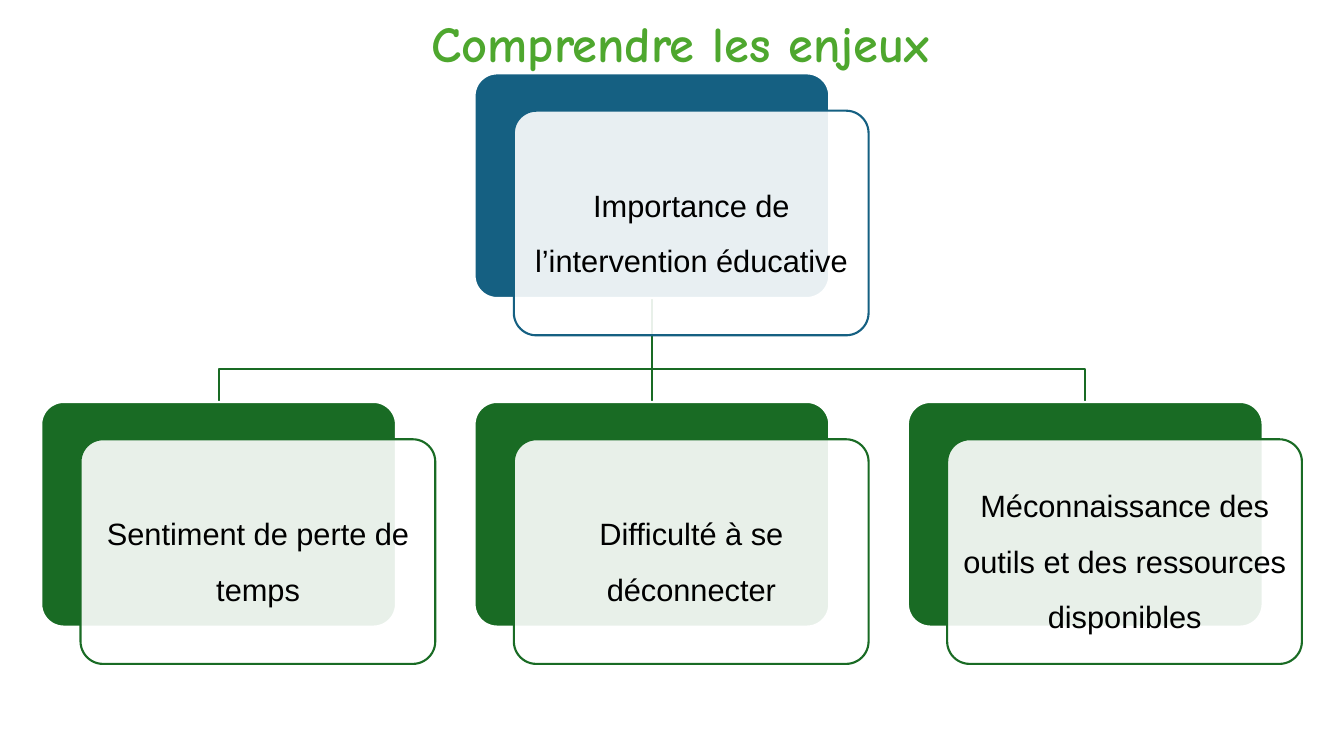
from lxml import etree
from pptx import Presentation
from pptx import util as u
from pptx.dml import color
from pptx.enum import shapes, text
from pptx.oxml import ns

WIDE, HIGH = 8.94, 5.66
LEFT, STEP = 1.04, 10.92
TOP, LOW = 1.85, 10.13
BLUE, GREEN = "156082", "196B24"


def paint(part, tint):
    """Give a fill, line or font a solid colour."""
    if hasattr(part, "solid"):
        part.solid()
        part.fore_color.rgb = color.RGBColor.from_string(tint)
    elif hasattr(part, "fill") and not hasattr(part, "bold"):
        paint(part.fill, tint)
    else:
        part.color.rgb = color.RGBColor.from_string(tint)


def card(slide, x, y, fill, edge, alpha=None):
    """Draw one rounded card, optionally see-through."""
    box = slide.shapes.add_shape(
        shapes.MSO_SHAPE.ROUNDED_RECTANGLE, u.Cm(x), u.Cm(y), u.Cm(WIDE), u.Cm(HIGH))
    box.adjustments[0] = 0.1
    box.shadow.inherit = False
    paint(box.fill, fill)
    paint(box.line, edge)
    box.line.width = u.Pt(1.5)
    if alpha:
        tone = box.fill._xPr.find(".//" + ns.qn("a:srgbClr"))
        etree.SubElement(tone, ns.qn("a:alpha"), val=str(alpha * 1000))


def label(slide, x, y, wide, high, words, size, face, tint, bold=False):
    """Add a wrapped text box of one run and return it."""
    box = slide.shapes.add_textbox(u.Cm(x), u.Cm(y), u.Cm(wide), u.Cm(high))
    box.text_frame.word_wrap = True
    run = box.text_frame.paragraphs[0].add_run()
    run.text = words
    run.font.size = u.Pt(size)
    run.font.name = face
    run.font.bold = bold
    paint(run.font, tint)
    return box


def node(slide, x, y, words, tint):
    """Draw a coloured card, its pale front card and its text."""
    card(slide, x, y, tint, "FFFFFF")
    card(slide, x + 0.99, y + 0.94, "FFFFFF", tint, 90)
    frame = label(slide, x + 1.16, y + 1.11, 8.61, 5.33,
                  words, 22, "Arial", "000000").text_frame
    frame.vertical_anchor = text.MSO_ANCHOR.MIDDLE
    frame.margin_left = frame.margin_right = u.Cm(0.23)
    frame.margin_top = frame.margin_bottom = u.Cm(0.23)
    para = frame.paragraphs[0]
    para.alignment = text.PP_ALIGN.CENTER
    para.line_spacing = 1.5
    para.space_after = u.Pt(7.7)


def link(slide, start, end):
    """Draw a branch from the top card to a lower card."""
    high, bend = TOP + HIGH, 9.3
    if start == end:
        line = slide.shapes.add_connector(
            shapes.MSO_CONNECTOR.STRAIGHT, u.Cm(start), u.Cm(high), u.Cm(end), u.Cm(LOW))
        etree.SubElement(line._element.spPr, ns.qn("a:effectLst"))
    else:
        pen = slide.shapes.build_freeform(u.Cm(start), u.Cm(high))
        spots = [(start, bend), (end, bend), (end, LOW)]
        pen.add_line_segments([(u.Cm(x), u.Cm(y)) for x, y in spots], close=False)
        line = pen.convert_to_shape()
        line.fill.background()
        line.shadow.inherit = False
    paint(line.line, GREEN)
    line.line.width = u.Pt(1.5)


def main():
    """Build the slide and save it."""
    deck = Presentation()
    deck.slide_width, deck.slide_height = u.Cm(33.87), u.Cm(19.05)
    slide = deck.slides.add_slide(deck.slide_layouts[6])
    cols = [LEFT + STEP * i for i in range(3)]
    mid = cols[1] + WIDE / 2
    for x in reversed(cols):
        link(slide, mid, x + WIDE / 2)
    node(slide, cols[1], TOP, "Importance de l’intervention éducative", BLUE)
    issues = ["Sentiment de perte de temps", "Difficulté à se déconnecter",
              "Méconnaissance des outils et des ressources disponibles"]
    for x, words in zip(cols, issues):
        node(slide, x, LOW, words, GREEN)
    label(slide, 10.62, 0.18, 14.45, 1.8, "Comprendre les enjeux",
          36, "Comic Neue", "4EA72E", True)
    deck.save("out.pptx")


if __name__ == "__main__":
    main()
